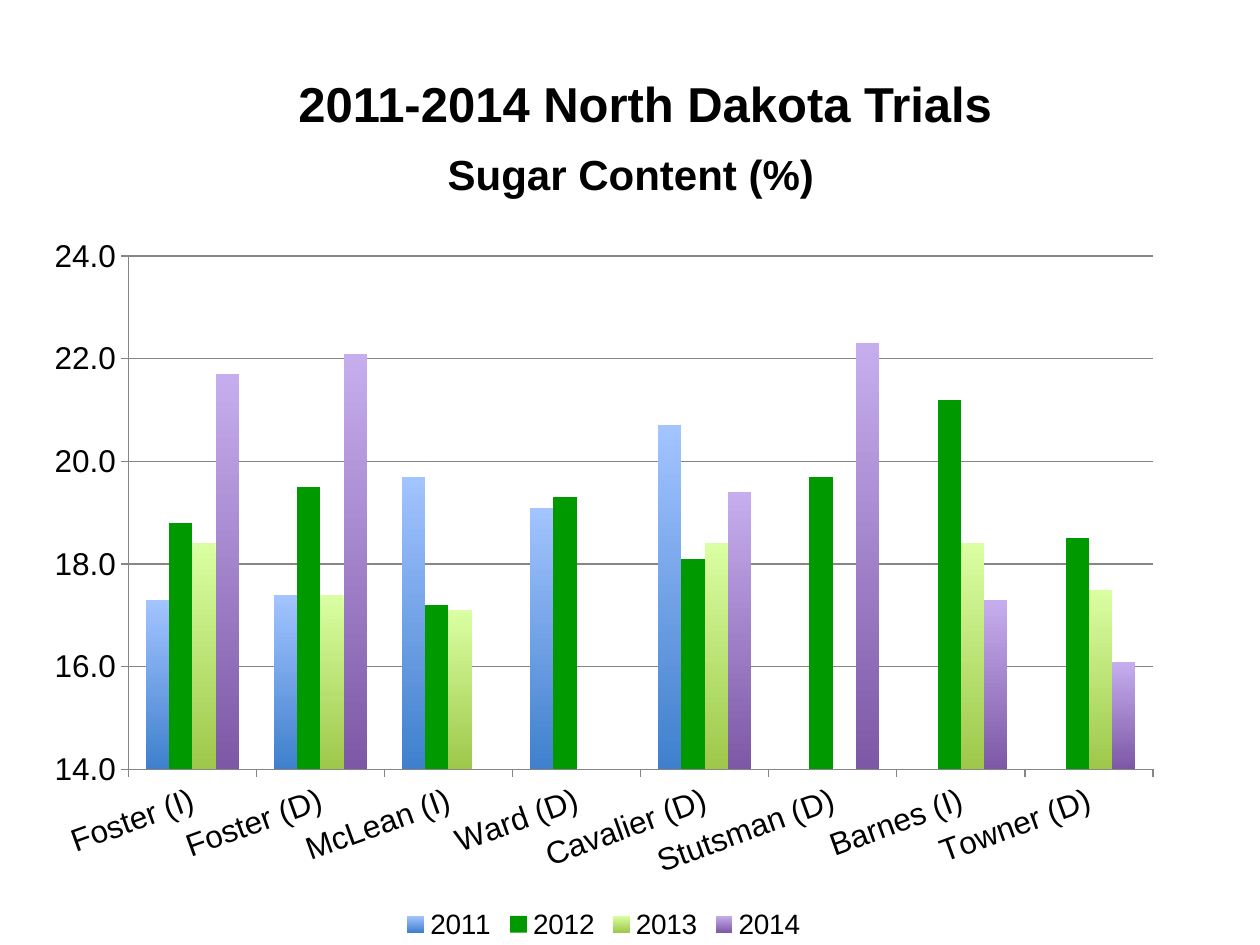
import pptx
import pptx.chart.data
import pptx.dml.color
import pptx.enum.chart
import pptx.enum.text
import pptx.util
from lxml import etree

Pt = pptx.util.Pt
FONT = "Arial"
GREY = "868686"
CATS = ["Foster (I)", "Foster (D)", "McLean (I)", "Ward (D)",
        "Cavalier (D)", "Stutsman (D)", "Barnes (I)", "Towner (D)"]
# Name, values, fill colours from top to bottom
ROWS = [
    ("2011", [17.3, 17.4, 19.7, 19.1, 20.7, None, None, None], ["A3C4FF", "3F80CD"]),
    ("2012", [18.8, 19.5, 17.2, 19.3, 18.1, 19.7, 21.2, 18.5], ["009900"]),
    ("2013", [18.4, 17.4, 17.1, None, 18.4, None, 18.4, 17.5], ["DAFFA2", "9DC84A"]),
    ("2014", [21.7, 22.1, None, None, 19.4, 22.3, 17.3, 16.1], ["C6AEEE", "7D58A6"]),
]


def tint(code):
    return pptx.dml.color.RGBColor.from_string(code)


def style(item, **vals):
    for key, val in vals.items():
        setattr(item, key, val)


def ink(font, size, bold=False):
    style(font, name=FONT, size=Pt(size), bold=bold)
    font.color.rgb = tint("000000")


def rule(line):
    line.width = Pt(0.75)
    line.color.rgb = tint(GREY)


def paint(fill, tints):
    if len(tints) == 1:
        fill.solid()
        fill.fore_color.rgb = tint(tints[0])
        return
    fill.gradient()
    fill.gradient_angle = 270
    for stop, code in zip(fill.gradient_stops, tints):
        stop.color.rgb = tint(code)


def pin(node, index, box, left, top, width=None, height=None):
    """Place a chart part by hand; lengths in points within the chart box."""
    ns = node.nsmap["c"]
    for old in node.findall(f"{{{ns}}}layout"):
        node.remove(old)
    vals = {"xMode": "edge", "yMode": "edge",
            "x": left / box[0], "y": top / box[1]}
    if width:
        vals = {"layoutTarget": "inner", **vals,
                "w": width / box[0], "h": height / box[1]}
    lay = etree.Element(f"{{{ns}}}layout")
    hand = etree.SubElement(lay, f"{{{ns}}}manualLayout")
    for key, val in vals.items():
        etree.SubElement(hand, f"{{{ns}}}{key}").set("val", str(val))
    node.insert(index, lay)


def head(slide, left, top, width, height):
    title = slide.shapes.title
    style(title, left=Pt(left), top=Pt(top), width=Pt(width), height=Pt(height))
    frame = title.text_frame
    frame.text = "2011-2014 North Dakota Trials"
    style(frame, word_wrap=True,
          auto_size=pptx.enum.text.MSO_AUTO_SIZE.SHAPE_TO_FIT_TEXT,
          vertical_anchor=pptx.enum.text.MSO_ANCHOR.TOP)
    para = frame.paragraphs[0]
    para.alignment = pptx.enum.text.PP_ALIGN.CENTER
    ink(para.runs[0].font, 28, True)


def graph(slide, left, top, width, height):
    box = (width, height)
    data = pptx.chart.data.CategoryChartData(number_format="0.0")
    data.categories = CATS
    for name, vals, _ in ROWS:
        data.add_series(name, vals)
    chart = slide.shapes.add_chart(
        pptx.enum.chart.XL_CHART_TYPE.COLUMN_CLUSTERED,
        Pt(left), Pt(top), Pt(width), Pt(height), data).chart
    ink(chart.font, 10)

    # Chart title
    chart.has_title = True
    frame = chart.chart_title.text_frame
    frame.text = "Sugar Content (%)"
    ink(frame.paragraphs[0].runs[0].font, 24, True)
    pin(chart.chart_title._element, 1, box, 233.5, -3.4)

    # Columns
    plot = chart.plots[0]
    style(plot, gap_width=150, overlap=0, vary_by_categories=False)
    for series, (_, _, tints) in zip(plot.series, ROWS):
        paint(series.format.fill, tints)
    pin(chart._chartSpace.chart.plotArea, 0, box, 55.3, 66.4, 585.6, 293.3)

    # Axes
    for axis in (chart.category_axis, chart.value_axis):
        axis.major_tick_mark = pptx.enum.chart.XL_TICK_MARK.OUTSIDE
        ink(axis.tick_labels.font, 18)
        rule(axis.format.line)
    axis = chart.value_axis
    style(axis, minimum_scale=14, maximum_scale=24, major_unit=2,
          has_major_gridlines=True)
    style(axis.tick_labels, number_format="0.0", number_format_is_linked=False)
    rule(axis.major_gridlines.format.line)
    body = chart.category_axis._element.xpath("c:txPr/a:bodyPr")[0]
    body.set("rot", str(-20 * 60000))
    body.set("vert", "horz")

    # Legend
    chart.has_legend = True
    style(chart.legend, include_in_layout=False,
          position=pptx.enum.chart.XL_LEGEND_POSITION.BOTTOM)
    ink(chart.legend.font, 16)


def main():
    deck = pptx.Presentation()
    style(deck, slide_width=Pt(720), slide_height=Pt(540))
    slide = deck.slides.add_slide(deck.slide_layouts[5])
    head(slide, 36, 38.5, 665.3, 41)
    graph(slide, 18, 80, 654, 460)
    deck.save("out.pptx")


if __name__ == "__main__":
    main()
